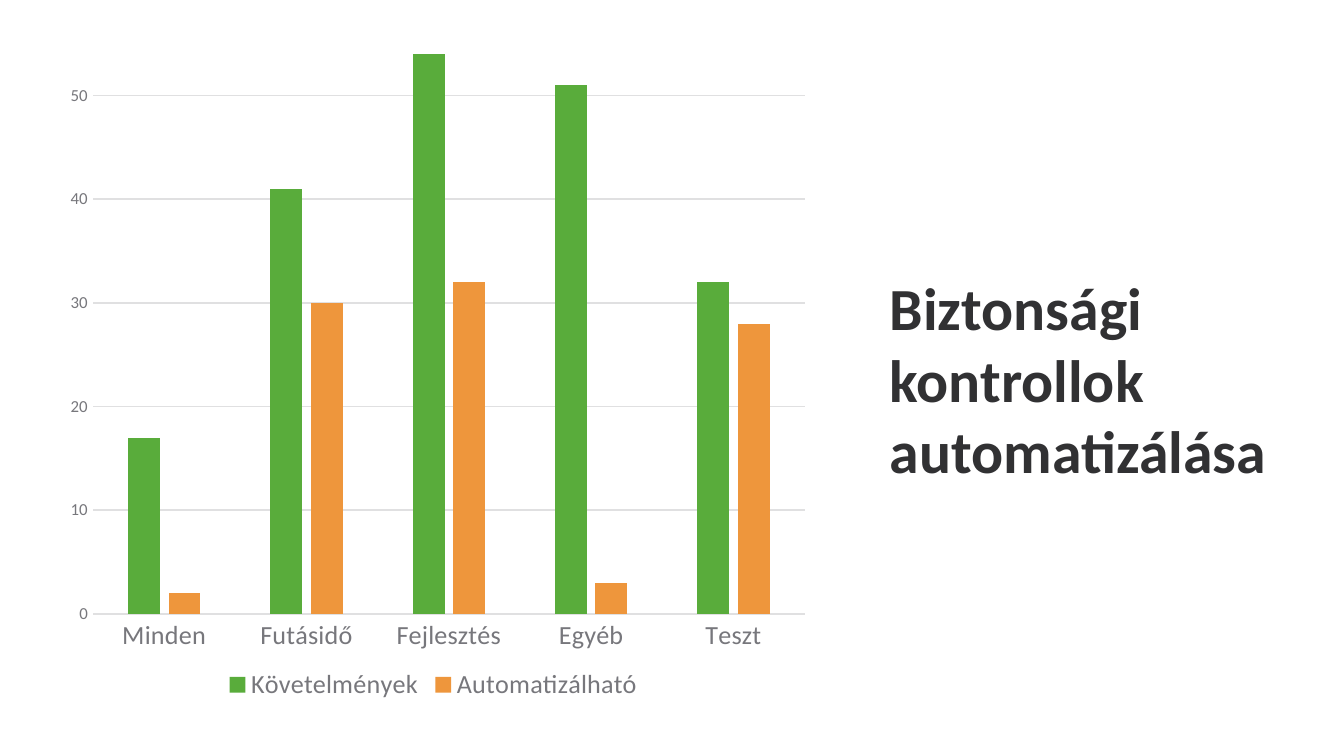
from lxml.etree import SubElement
from pptx import Presentation
from pptx.chart.data import CategoryChartData
from pptx.dml.color import RGBColor
from pptx.enum.chart import XL_CHART_TYPE, XL_LEGEND_POSITION, XL_TICK_MARK
from pptx.enum.text import MSO_ANCHOR, MSO_AUTO_SIZE, PP_ALIGN
from pptx.oxml.ns import qn
from pptx.util import Inches, Pt

# Slide of 16 to 9
WIDE = 10
HIGH = WIDE * 9 / 16

FONT = "Calibri"
DARK = RGBColor(0x31, 0x31, 0x33)
GRAY = RGBColor(0x77, 0x77, 0x7C)
GRID = RGBColor(0xE0, 0xE0, 0xE1)
GREEN = RGBColor(0x59, 0xAC, 0x3B)
ORANGE = RGBColor(0xEE, 0x96, 0x3C)

GROUPS = ["Minden", "Futásidő", "Fejlesztés", "Egyéb", "Teszt"]
SERIES = [
    ("Követelmények", [17, 41, 54, 51, 32], GREEN),
    ("Automatizálható", [2, 30, 32, 3, 28], ORANGE),
]


def style(font, size, color, bold=False):
    font.name = FONT
    font.size = Pt(size)
    font.bold = bold
    font.color.rgb = color


def rule(line):
    line.color.rgb = GRID
    line.width = Pt(0.75)


def set_plot(chart, x, y, w, h):
    """Fix the inner plot area, in fractions of the chart."""
    area = chart.plots[0]._element.getparent()
    for old in area.findall(qn("c:layout")):
        area.remove(old)
    layout = area.makeelement(qn("c:layout"))
    area.insert(0, layout)
    manual = SubElement(layout, qn("c:manualLayout"))
    parts = [("layoutTarget", "inner"), ("xMode", "edge"), ("yMode", "edge"),
             ("x", x), ("y", y), ("w", w), ("h", h)]
    for tag, val in parts:
        SubElement(manual, qn("c:" + tag)).set("val", str(val))


def add_bars(slide, left, top, width, height):
    data = CategoryChartData()
    data.categories = GROUPS
    for name, vals, _ in SERIES:
        data.add_series(name, vals)
    chart = slide.shapes.add_chart(
        XL_CHART_TYPE.COLUMN_CLUSTERED, Inches(left), Inches(top),
        Inches(width), Inches(height), data).chart
    chart.has_title = False
    style(chart.font, 10, DARK)
    set_plot(chart, 0.073, 0.055, 0.893, 0.823)

    # Bars
    plot = chart.plots[0]
    plot.gap_width = 219
    plot.overlap = -27
    plot.vary_by_categories = False
    for bars, (_, _, color) in zip(plot.series, SERIES):
        bars.format.fill.solid()
        bars.format.fill.fore_color.rgb = color

    # Axes
    for axis, size in ((chart.category_axis, 14), (chart.value_axis, 9)):
        axis.major_tick_mark = XL_TICK_MARK.NONE
        axis.minor_tick_mark = XL_TICK_MARK.NONE
        style(axis.tick_labels.font, size, GRAY)
    rule(chart.category_axis.format.line)
    scale = chart.value_axis
    scale.minimum_scale = 0
    scale.maximum_scale = 60
    scale.major_unit = 10
    scale.format.line.fill.background()
    rule(scale.major_gridlines.format.line)

    # Legend
    chart.has_legend = True
    chart.legend.position = XL_LEGEND_POSITION.BOTTOM
    chart.legend.include_in_layout = False
    style(chart.legend.font, 14, GRAY)


def set_title(slide, left, top, width, height):
    title = slide.shapes.title
    title.left, title.top = Inches(left), Inches(top)
    title.width, title.height = Inches(width), Inches(height)
    frame = title.text_frame
    frame.text = "Biztonsági kontrollok automatizálása"
    frame.word_wrap = True
    frame.auto_size = MSO_AUTO_SIZE.NONE
    frame.vertical_anchor = MSO_ANCHOR.MIDDLE
    frame.margin_left = frame.margin_right = 0
    frame.margin_top = frame.margin_bottom = 0
    par = frame.paragraphs[0]
    par.alignment = PP_ALIGN.LEFT
    style(par.font, 32, DARK, bold=True)


def main():
    deck = Presentation()
    deck.slide_width, deck.slide_height = Inches(WIDE), Inches(HIGH)
    slide = deck.slides.add_slide(deck.slide_layouts[5])
    set_title(slide, 6.62, 1.64, 3.38, 2.35)
    add_bars(slide, 0.26, -0.37, 5.93, HIGH)
    deck.save("out.pptx")


if __name__ == "__main__":
    main()
